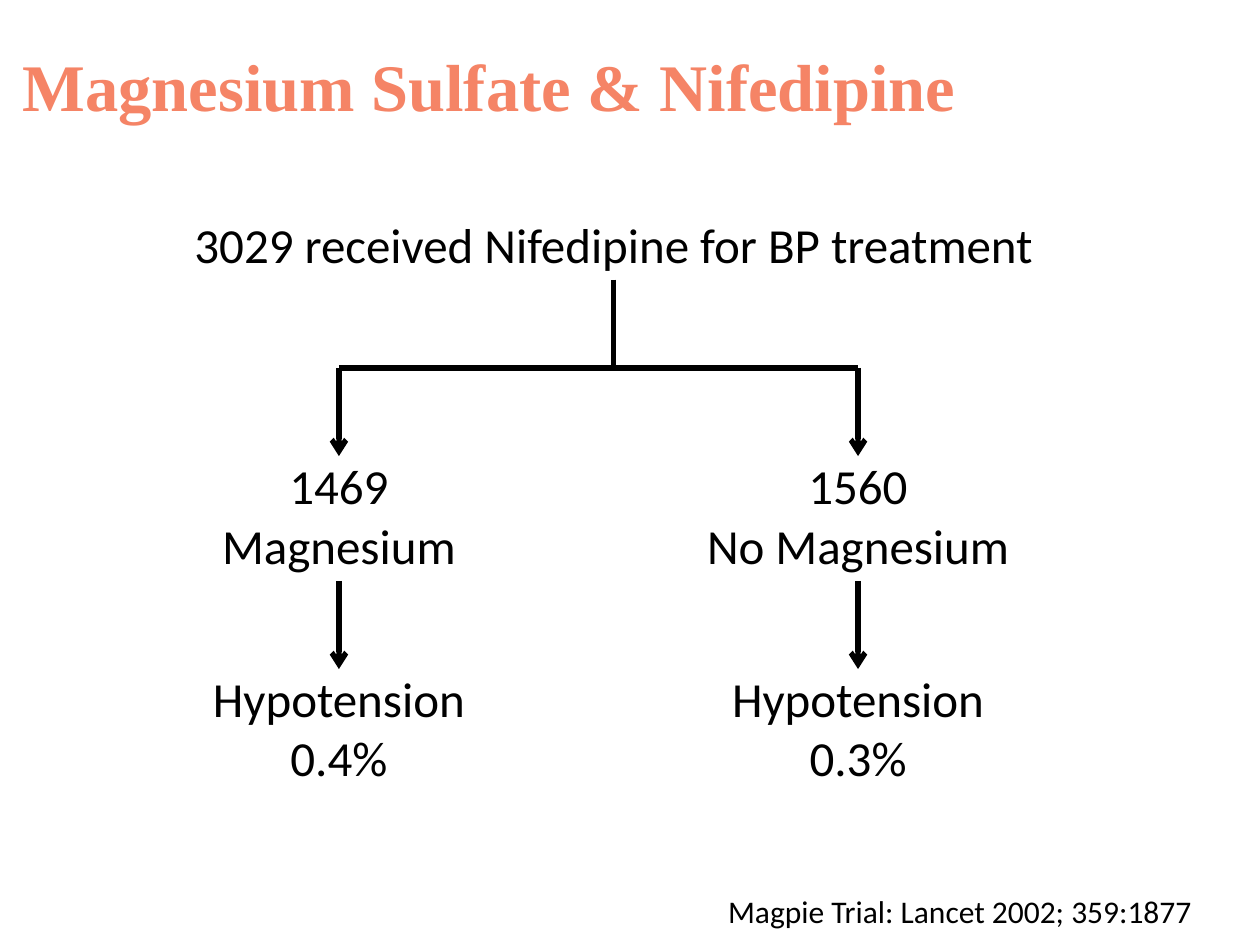
from lxml.etree import SubElement
from pptx import Presentation
from pptx.dml.color import RGBColor
from pptx.enum.shapes import MSO_CONNECTOR
from pptx.enum.text import MSO_ANCHOR, PP_ALIGN
from pptx.oxml.ns import qn
from pptx.util import Inches, Pt

COLORS = {"title": "F58466", "ink": "000000"}
LEFT_COLUMN, MIDDLE, RIGHT_COLUMN = 2.69, 4.87, 6.81
BRANCH_Y = 2.92
ARROW_LENGTH = 0.7


def add_text(slide, lines, left, top, width, height, size=28, font="Calibri",
             color="ink", bold=False, align=PP_ALIGN.CENTER,
             anchor=MSO_ANCHOR.TOP, wrap=False):
    box = slide.shapes.add_textbox(Inches(left), Inches(top), Inches(width), Inches(height))
    frame = box.text_frame
    frame.word_wrap = wrap
    frame.vertical_anchor = anchor
    frame.text = "\n".join(lines)
    for paragraph in frame.paragraphs:
        paragraph.alignment = align
        paragraph.font.name = font
        paragraph.font.size = Pt(size)
        paragraph.font.bold = bold
        paragraph.font.color.rgb = RGBColor.from_string(COLORS[color])


def add_centered_text(slide, lines, center, top, width, height=0.57):
    add_text(slide, lines, center - width / 2, top, width, height)


def add_line(slide, start, end, arrow=False):
    points = [Inches(value) for value in (*start, *end)]
    connector = slide.shapes.add_connector(MSO_CONNECTOR.STRAIGHT, *points)
    connector.line.width = Pt(3)
    connector.line.color.rgb = RGBColor.from_string(COLORS["ink"])
    if arrow:
        SubElement(connector.line._get_or_add_ln(), qn("a:tailEnd"), type="arrow")
    SubElement(connector._element.spPr, qn("a:effectLst"))


def add_down_line(slide, center, top, arrow=True):
    add_line(slide, (center, top), (center, top + ARROW_LENGTH), arrow)


def add_arm(slide, center, count, group, group_width, rate):
    add_down_line(slide, center, BRANCH_Y)
    add_centered_text(slide, [count], center, 3.57, 1)
    add_centered_text(slide, [group], center, 4.04, group_width)
    add_down_line(slide, center, 4.61)
    add_centered_text(slide, ["Hypotension", rate], center, 5.26, 2.22, 1.04)


def main():
    presentation = Presentation()
    presentation.slide_width = Inches(10)
    presentation.slide_height = Inches(7.5)
    slide = presentation.slides.add_slide(presentation.slide_layouts[6])

    add_text(slide, ["Magnesium Sulfate & Nifedipine"], 0.08, 0.17, 8.5, 1, size=38,
             font="Times New Roman", color="title", bold=True,
             align=PP_ALIGN.LEFT, anchor=MSO_ANCHOR.MIDDLE, wrap=True)
    add_centered_text(slide, ["3029 received Nifedipine for BP treatment"],
                      MIDDLE, 1.65, 6.93)
    add_down_line(slide, MIDDLE, BRANCH_Y - ARROW_LENGTH, arrow=False)
    add_line(slide, (LEFT_COLUMN, BRANCH_Y), (RIGHT_COLUMN, BRANCH_Y))
    add_arm(slide, LEFT_COLUMN, "1469", "Magnesium", 2.08, "0.4%")
    add_arm(slide, RIGHT_COLUMN, "1560", "No Magnesium", 2.63, "0.3%")
    add_text(slide, ["Magpie Trial: Lancet 2002; 359:1877"], 5.68, 7.03, 3.93, 0.4,
             size=18, align=PP_ALIGN.LEFT)

    presentation.save("out.pptx")


if __name__ == "__main__":
    main()
